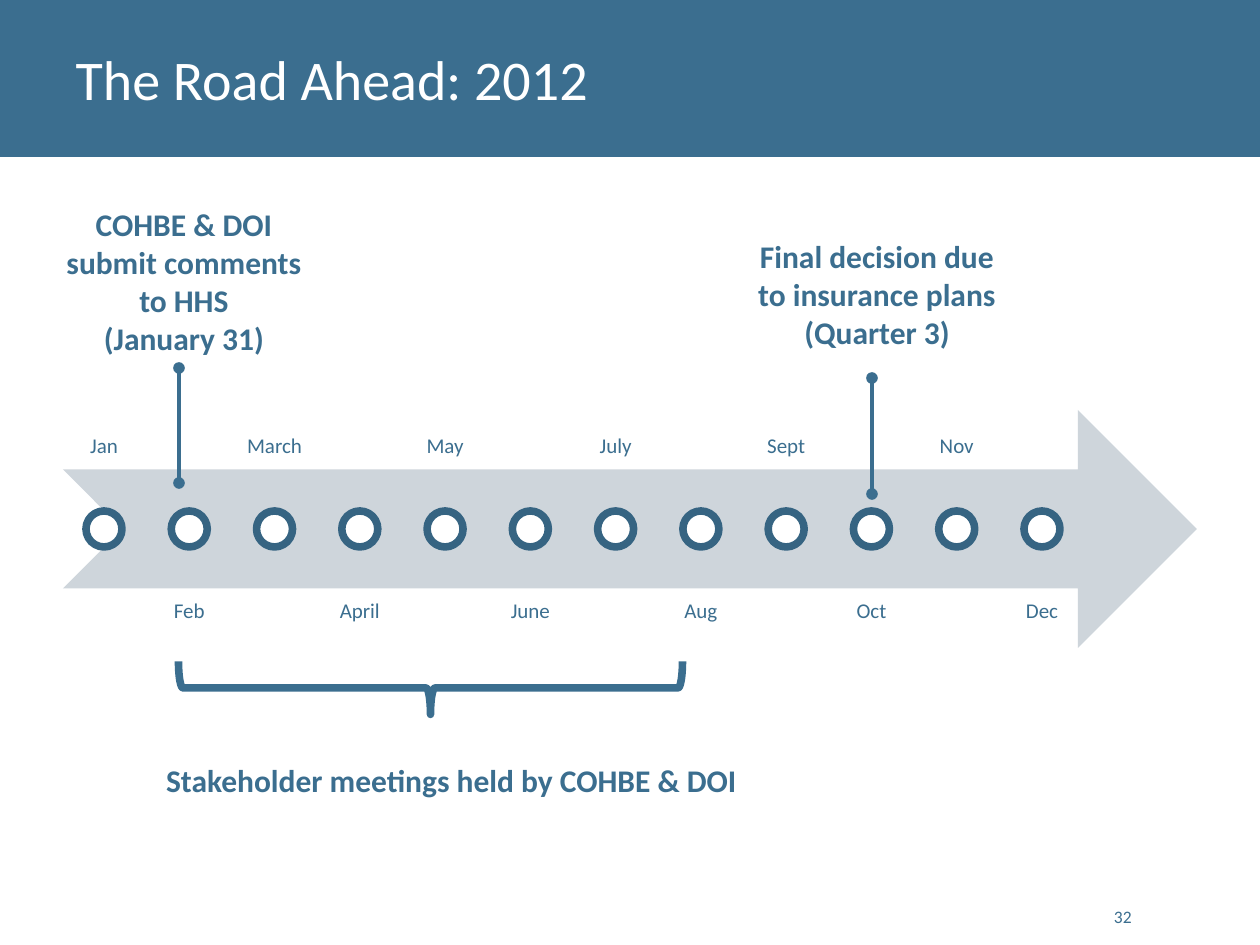
import pptx
import pptx.dml.color
import pptx.enum.shapes
import pptx.enum.text
import pptx.oxml
import pptx.oxml.ns
import pptx.util

PX = 914400 / 126
COLORS = {"blue": "3B6E8F", "ring": "366482", "arrow": "CED5DB", "white": "FFFFFF"}
MONTHS = ["Jan", "Feb", "March", "April", "May", "June",
          "July", "Aug", "Sept", "Oct", "Nov", "Dec"]
SHAPES = pptx.enum.shapes.MSO_SHAPE
ALIGN = pptx.enum.text.PP_ALIGN
ANCHOR = pptx.enum.text.MSO_ANCHOR


def emu(*lengths):
    return [pptx.util.Emu(round(length * PX)) for length in lengths]


def rgb(name):
    return pptx.dml.color.RGBColor.from_string(COLORS[name])


def write(frame, text, size=18, color="blue", bold=False, align=ALIGN.CENTER,
          anchor=ANCHOR.TOP, spacing=None):
    """Fill a text frame, one paragraph per line of text."""
    frame.word_wrap = True
    frame.vertical_anchor = anchor
    frame.text = text
    for paragraph in frame.paragraphs:
        paragraph.alignment = align
        if spacing:
            paragraph.line_spacing = spacing
        for run in paragraph.runs:
            run.font.name = "Calibri"
            run.font.size = pptx.util.Pt(size)
            run.font.bold = bold
            run.font.color.rgb = rgb(color)


class TimelineSlide:
    def __init__(self, deck):
        self.slide = deck.slides.add_slide(deck.slide_layouts[5])
        self.shapes = self.slide.shapes

    def title(self, text, x, y, w, h):
        heading = self.shapes.title
        heading.left, heading.top, heading.width, heading.height = emu(x, y, w, h)
        write(heading.text_frame, text, size=32, color="white",
              align=ALIGN.LEFT, anchor=ANCHOR.MIDDLE)

    def shape(self, kind, x, y, w, h, fill=None, line=None, weight=4.33):
        drawn = self.shapes.add_shape(kind, *emu(x, y, w, h))
        drawn.shadow.inherit = False
        if fill:
            drawn.fill.solid()
            drawn.fill.fore_color.rgb = rgb(fill)
        else:
            drawn.fill.background()
        if line:
            drawn.line.color.rgb = rgb(line)
            drawn.line.width = pptx.util.Pt(weight)
        else:
            drawn.line.fill.background()
        return drawn

    def band(self, w, h):
        """Header band, placed behind the title."""
        band = self.shape(SHAPES.RECTANGLE, 0, 0, w, h, fill="blue")
        self.shapes.title._element.addprevious(band._element)

    def text(self, text, x, y, w, h, inset=None, **style):
        frame = self.shapes.add_textbox(*emu(x, y, w, h)).text_frame
        if inset is not None:
            (margin,) = emu(inset)
            frame.margin_left = frame.margin_right = margin
            frame.margin_top = frame.margin_bottom = margin
        write(frame, text, **style)

    def pin(self, x, top, bottom):
        """Vertical line with a dot at each end."""
        pin = self.shapes.add_connector(
            pptx.enum.shapes.MSO_CONNECTOR.STRAIGHT, *emu(x, top, x, bottom))
        pin.line.color.rgb = rgb("blue")
        pin.line.width = pptx.util.Pt(2.25)
        namespace = pptx.oxml.ns.nsdecls("a")
        for end in ("headEnd", "tailEnd"):
            pin.line._get_or_add_ln().append(
                pptx.oxml.parse_xml(f'<a:{end} {namespace} type="oval"/>'))
        pin._element.spPr.append(pptx.oxml.parse_xml(f"<a:effectLst {namespace}/>"))

    def month(self, name, center, above):
        width, height, dot = 80, 238, 36
        top, anchor = (231, ANCHOR.BOTTOM) if above else (589, ANCHOR.TOP)
        self.text(name, center - width / 2, top, width, height, inset=11,
                  size=12, anchor=anchor, spacing=0.9)
        self.shape(SHAPES.OVAL, center - dot / 2, 511, dot, dot,
                   fill="white", line="ring")


def main():
    deck = pptx.Presentation()
    deck.slide_width, deck.slide_height = emu(1260, 945)
    road = TimelineSlide(deck)

    road.band(1260, 157)
    road.title("The Road Ahead: 2012", 63, 0, 1134, 157)

    road.shape(SHAPES.NOTCHED_RIGHT_ARROW, 63, 410, 1134, 238, fill="arrow")
    first, last = 104, 1042
    pitch = (last - first) / (len(MONTHS) - 1)
    for index, name in enumerate(MONTHS):
        road.month(name, first + index * pitch, above=index % 2 == 0)

    road.text("COHBE & DOI submit comments to HHS\n(January 31)",
              53, 199, 262, 165, bold=True)
    road.text("Final decision due to insurance plans\n(Quarter 3)",
              742, 231, 270, 127, bold=True)
    road.text("Stakeholder meetings held by COHBE & DOI",
              126, 755, 651, 165, bold=True)
    road.pin(179, 368, 483)
    road.pin(872, 378, 494)

    brace = road.shape(SHAPES.RIGHT_BRACE, 404, 436, 53, 504, line="blue")
    brace.rotation = 90
    road.text("32", 1094, 883, 50, 50, size=10, align=ALIGN.RIGHT,
              anchor=ANCHOR.BOTTOM)

    deck.save("out.pptx")


if __name__ == "__main__":
    main()
